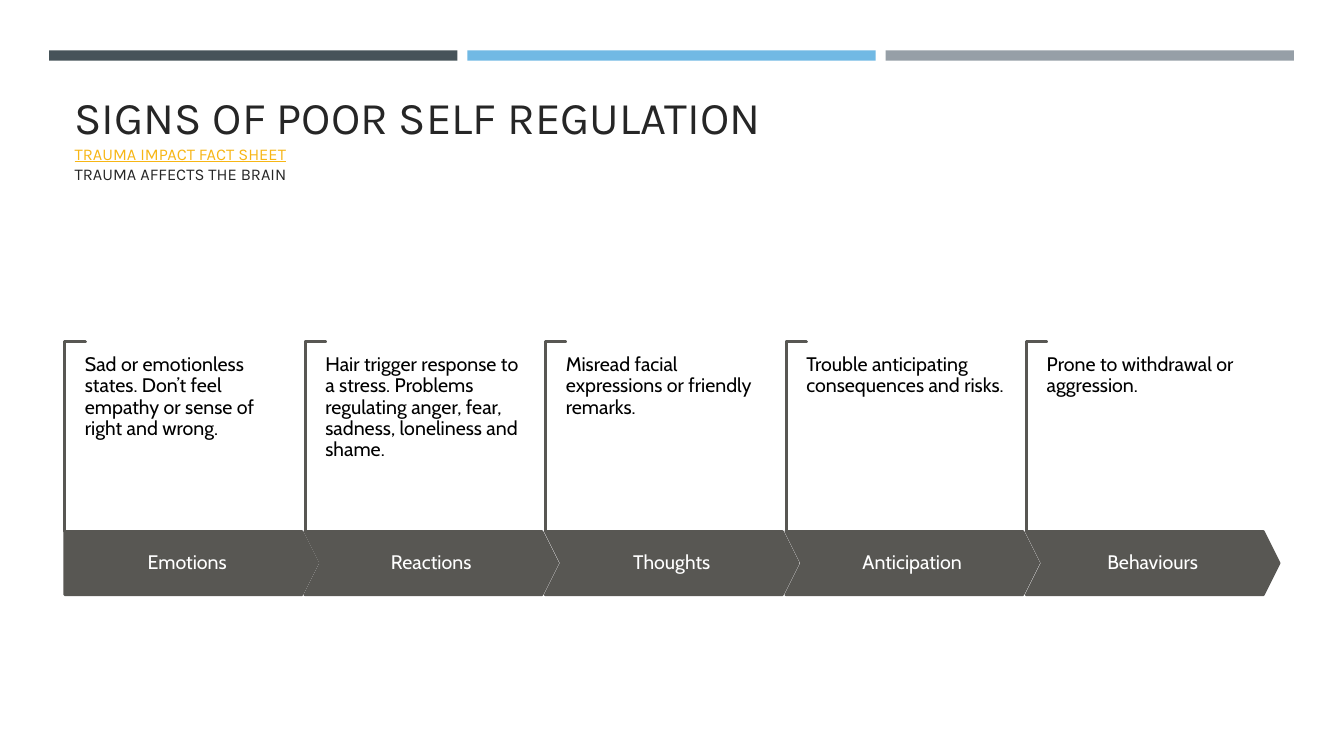
from pptx import Presentation
from pptx.dml.color import RGBColor
from pptx.enum.shapes import MSO_SHAPE
from pptx.enum.text import MSO_ANCHOR, PP_ALIGN
from pptx.util import Cm, Pt

COLORS = {
    "slate": "465359", "sky": "71B9E4", "mist": "969FA7",
    "stone": "585753", "sand": "EBDDC3", "gold": "F7B615",
    "ink": "262626", "black": "000000", "white": "FFFFFF",
}

STEPS = [
    ("Emotions", "Sad or emotionless states. Don’t feel empathy or sense of "
                 "right and wrong."),
    ("Reactions", "Hair trigger response to a stress. Problems regulating "
                  "anger, fear, sadness, loneliness and shame."),
    ("Thoughts", "Misread facial expressions or friendly remarks."),
    ("Anticipation", "Trouble anticipating consequences and risks."),
    ("Behaviours", "Prone to withdrawal or aggression."),
]


def color(name):
    return RGBColor.from_string(COLORS[name])


def apply(item, values):
    for key, value in values.items():
        setattr(item, key, value)


class Deck:
    head = {"name": "Karla", "size": Pt(32.4)}
    sub = {"name": "Karla", "size": Pt(11.7)}
    body = {"name": "Cabin", "size": Pt(14)}
    para = {"line_spacing": 0.9, "space_after": Pt(5)}

    def __init__(self):
        self.file = Presentation()
        apply(self.file, {"slide_width": Cm(33.87), "slide_height": Cm(19.05)})
        self.slide = self.file.slides.add_slide(self.file.slide_layouts[6])

    def frame(self, shape, anchor, side, edge):
        frame = shape.text_frame
        apply(frame, {
            "word_wrap": True, "vertical_anchor": anchor,
            "margin_left": Cm(side), "margin_right": Cm(side),
            "margin_top": Cm(edge), "margin_bottom": Cm(edge),
        })
        return frame.paragraphs[0]

    def run(self, para, text, font, tint, **extra):
        run = para.add_run()
        run.text = text
        apply(run.font, {**font, **extra})
        run.font.color.rgb = color(tint)

    def shape(self, kind, box, fill, line=None, adjust=()):
        shape = self.slide.shapes.add_shape(kind, *map(Cm, box))
        shape.shadow.inherit = False
        shape.fill.solid()
        shape.fill.fore_color.rgb = color(fill)
        if line:
            shape.line.color.rgb = color(line)
            shape.line.width = Pt(1.75)
        else:
            shape.line.fill.background()
        for i, value in enumerate(adjust):
            shape.adjustments[i] = value
        return shape

    def title(self, box, lines):
        shape = self.slide.shapes.add_textbox(*map(Cm, box))
        para = self.frame(shape, MSO_ANCHOR.BOTTOM, 0.25, 0.13)
        for i, (text, font, tint, under) in enumerate(lines):
            if i:
                para.add_line_break()
            self.run(para, text, font, tint, underline=under)

    def note(self, box, text):
        shape = self.slide.shapes.add_textbox(*map(Cm, box))
        para = self.frame(shape, MSO_ANCHOR.TOP, 0, 0)
        apply(para, self.para)
        self.run(para, text, self.body, "black")

    def arrow(self, kind, box, text):
        shape = self.shape(kind, box, "stone", "stone", [0.25])
        para = self.frame(shape, MSO_ANCHOR.MIDDLE, 0.25, 0.1)
        apply(para, {**self.para, "alignment": PP_ALIGN.CENTER})
        self.run(para, text, self.body, "white")

    def bracket(self, left, top, width, height):
        # The corner is laid out lengthwise, then turned about its centre
        shift = (height - width) / 2
        box = (left - shift, top + shift, height, width)
        shape = self.shape(MSO_SHAPE.CORNER, box, "sand", "stone", [0.01, 0.01])
        shape.rotation = 90


def main():
    deck = Deck()

    # Top bars
    for i, tint in enumerate(("slate", "sky", "mist")):
        deck.shape(MSO_SHAPE.RECTANGLE, (1.24 + i * 10.54, 1.27, 10.29, 0.26), tint)

    # Title
    deck.title((1.63, 1.96, 30.63, 2.79), [
        ("SIGNS OF POOR SELF REGULATION", deck.head, "ink", False),
        ("TRAUMA IMPACT FACT SHEET", deck.sub, "gold", True),
        ("TRAUMA AFFECTS THE BRAIN", deck.sub, "ink", False),
    ])

    # Steps: bracket, arrow and note in each column
    for i, (label, text) in enumerate(STEPS):
        left = 1.63 + i * 6.06
        deck.bracket(left, 8.61, 0.52, 4.78)
        kind, start = MSO_SHAPE.CHEVRON, left - 0.01
        if i == 0:
            kind, start = MSO_SHAPE.PENTAGON, left
        deck.arrow(kind, (start, 13.39, 6.38, 1.6), label)
        deck.note((left + 0.51, 8.94, 5.18, 3), text)

    deck.file.save("out.pptx")


if __name__ == "__main__":
    main()
